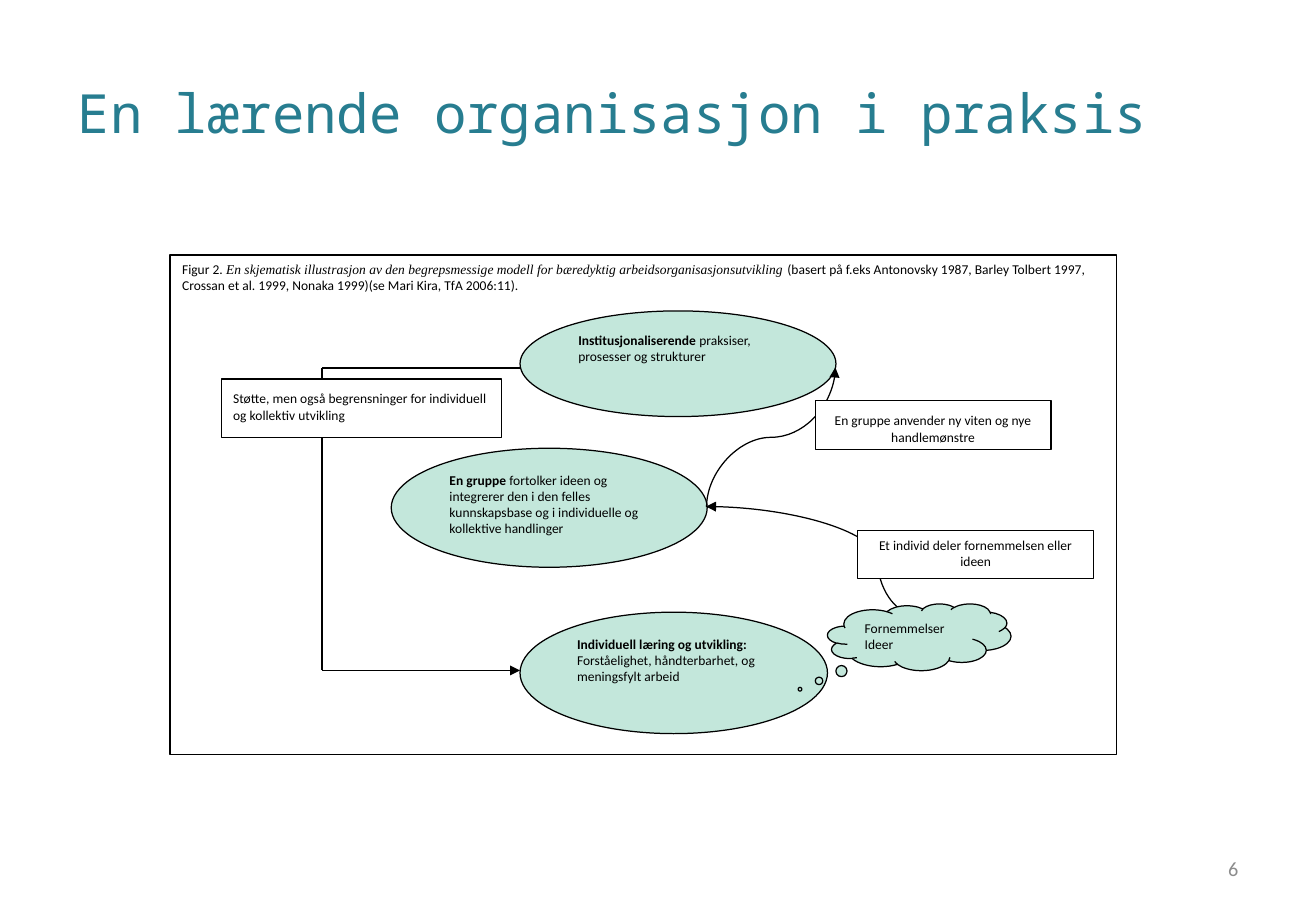
from dataclasses import dataclass

import pptx
import pptx.dml.color
import pptx.enum.shapes
import pptx.enum.text
import pptx.oxml
import pptx.oxml.ns
import pptx.util

Inches = pptx.util.Inches
Shape = pptx.enum.shapes.MSO_SHAPE
Connector = pptx.enum.shapes.MSO_CONNECTOR
Align = pptx.enum.text.PP_ALIGN
Anchor = pptx.enum.text.MSO_ANCHOR

BLACK, WHITE, MINT, TEAL, GREY = "000000", "FFFFFF", "C3E7DB", "277D90", "8C8C8C"
BODY_FONT = "Calibri"
DRAWING_NS = pptx.oxml.ns.nsdecls("a")


@dataclass(frozen=True)
class Run:
    text: str
    bold: bool = False
    italic: bool = False
    size: float = 8
    font: str = BODY_FONT


@dataclass(frozen=True)
class Node:
    kind: Shape
    left: float
    top: float
    width: float
    height: float
    fill: str
    runs: tuple[Run, ...]
    align: Align = Align.LEFT
    adjustments: tuple[float, ...] = ()


@dataclass(frozen=True)
class Link:
    """A connector; rotation turns its box clockwise, bend places the curve's middle."""
    kind: Connector
    start: tuple[float, float]
    end: tuple[float, float]
    arrow: bool = False
    rotation: int = 0
    bend: float = 0.5


@dataclass(frozen=True)
class Heading:
    text: str
    left: float
    top: float
    width: float
    height: float
    size: float
    font: str
    color: str
    align: Align


HEADINGS = (
    Heading("En lærende organisasjon i praksis", 0.54, 0.3, 9.75, 1.25,
            32, "Noto Sans Mono", TEAL, Align.LEFT),
    Heading("6", 7.76, 6.95, 2.53, 0.4, 12, BODY_FONT, GREY, Align.RIGHT),
)

FRAME_AND_STAGES = (
    Node(Shape.RECTANGLE, 1.4, 2.1, 7.79, 4.11, WHITE, (
        Run("Figur 2. "),
        Run("En skjematisk illustrasjon av den begrepsmessige modell for "
            "bæredyktig arbeidsorganisasjonsutvikling",
            italic=True, font="Times New Roman"),
        Run(" (basert på f.eks Antonovsky 1987, Barley Tolbert 1997, "
            "Crossan et al. 1999, Nonaka 1999)(se Mari Kira, TfA 2006:11)."))),
    Node(Shape.OVAL, 4.28, 2.56, 2.6, 0.87, MINT, (
        Run("Institusjonaliserende ", bold=True),
        Run("praksiser, prosesser og strukturer"))),
    Node(Shape.OVAL, 3.22, 3.69, 2.6, 0.98, MINT, (
        Run("En gruppe", bold=True),
        Run(" fortolker ideen og integrerer den i den felles kunnskapsbase "
            "og i individuelle og kollektive handlinger"))),
    Node(Shape.OVAL, 4.28, 5.04, 2.53, 1, MINT, (
        Run("Individuell læring og utvikling: ", bold=True),
        Run("Forståelighet, håndterbarhet, og meningsfylt arbeid"))),
)

LINKS = (
    Link(Connector.STRAIGHT, (4.28, 3.03), (2.65, 3.03)),
    Link(Connector.STRAIGHT, (2.65, 3.03), (2.65, 5.52)),
    Link(Connector.STRAIGHT, (2.65, 5.52), (4.28, 5.52), arrow=True),
    Link(Connector.CURVE, (5.77, 3.07), (6.92, 4.13), arrow=True, rotation=270),
    Link(Connector.CURVE, (5.81, 4.17), (7.51, 5.05), arrow=True, rotation=180,
         bend=0.17),
)

LABELS_AND_CLOUD = (
    Node(Shape.RECTANGLE, 1.82, 3.12, 2.31, 0.48, WHITE, (
        Run("Støtte, men også begrensninger for individuell"),
        Run(" ", size=11),
        Run("og kollektiv utvikling"))),
    Node(Shape.RECTANGLE, 6.71, 3.3, 1.94, 0.4, WHITE, (
        Run("En gruppe anvender ny viten og nye"),
        Run(" ", size=11),
        Run("handlemønstre")), Align.CENTER),
    Node(Shape.RECTANGLE, 7.06, 4.37, 1.94, 0.39, WHITE, (
        Run("Et individ deler fornemmelsen eller ideen"),), Align.CENTER),
    Node(Shape.CLOUD_CALLOUT, 6.81, 4.97, 1.51, 0.55, MINT, (
        Run("Fornemmelser Ideer"),), adjustments=(-0.65, 0.78)),
)


def rgb(color: str) -> pptx.dml.color.RGBColor:
    return pptx.dml.color.RGBColor.from_string(color)


def set_outline(line) -> None:
    line.color.rgb = rgb(BLACK)
    line.width = pptx.util.Pt(0.75)


def add_heading(slide, heading: Heading) -> None:
    box = slide.shapes.add_textbox(Inches(heading.left), Inches(heading.top),
                                   Inches(heading.width), Inches(heading.height))
    frame = box.text_frame
    frame.word_wrap = True
    frame.vertical_anchor = Anchor.MIDDLE
    paragraph = frame.paragraphs[0]
    paragraph.text = heading.text
    paragraph.alignment = heading.align
    paragraph.font.size = pptx.util.Pt(heading.size)
    paragraph.font.name = heading.font
    paragraph.font.color.rgb = rgb(heading.color)


def add_node(slide, node: Node) -> None:
    shape = slide.shapes.add_shape(node.kind, Inches(node.left), Inches(node.top),
                                   Inches(node.width), Inches(node.height))
    shape.shadow.inherit = False
    shape.fill.solid()
    shape.fill.fore_color.rgb = rgb(node.fill)
    set_outline(shape.line)
    for index, value in enumerate(node.adjustments):
        shape.adjustments[index] = value

    frame = shape.text_frame
    frame.word_wrap = True
    frame.vertical_anchor = Anchor.TOP
    paragraph = frame.paragraphs[0]
    paragraph.alignment = node.align
    paragraph.space_after = pptx.util.Pt(10)
    for part in node.runs:
        run = paragraph.add_run()
        run.text = part.text
        run.font.size = pptx.util.Pt(part.size)
        run.font.name = part.font
        run.font.bold = part.bold
        run.font.italic = part.italic
        run.font.color.rgb = rgb(BLACK)


def add_link(slide, link: Link) -> None:
    connector = slide.shapes.add_connector(
        link.kind, *map(Inches, link.start), *map(Inches, link.end))
    set_outline(connector.line)
    properties = connector._element.spPr
    if link.arrow:
        properties.find(pptx.oxml.ns.qn("a:ln")).append(
            pptx.oxml.parse_xml(f'<a:tailEnd {DRAWING_NS} type="triangle"/>'))
    if link.kind == Connector.CURVE:
        properties.find(pptx.oxml.ns.qn("a:xfrm")).set("rot", str(link.rotation * 60000))
        guides = properties.find(".//" + pptx.oxml.ns.qn("a:avLst"))
        guides.append(pptx.oxml.parse_xml(
            f'<a:gd {DRAWING_NS} name="adj1" fmla="val {round(link.bend * 100000)}"/>'))
    properties.append(pptx.oxml.parse_xml(f"<a:effectLst {DRAWING_NS}/>"))


def main() -> None:
    presentation = pptx.Presentation()
    presentation.slide_width = Inches(10.83)
    presentation.slide_height = Inches(7.5)
    slide = presentation.slides.add_slide(presentation.slide_layouts[6])
    for heading in HEADINGS:
        add_heading(slide, heading)
    for node in FRAME_AND_STAGES:
        add_node(slide, node)
    for link in LINKS:
        add_link(slide, link)
    for node in LABELS_AND_CLOUD:
        add_node(slide, node)
    presentation.save("out.pptx")


if __name__ == "__main__":
    main()
